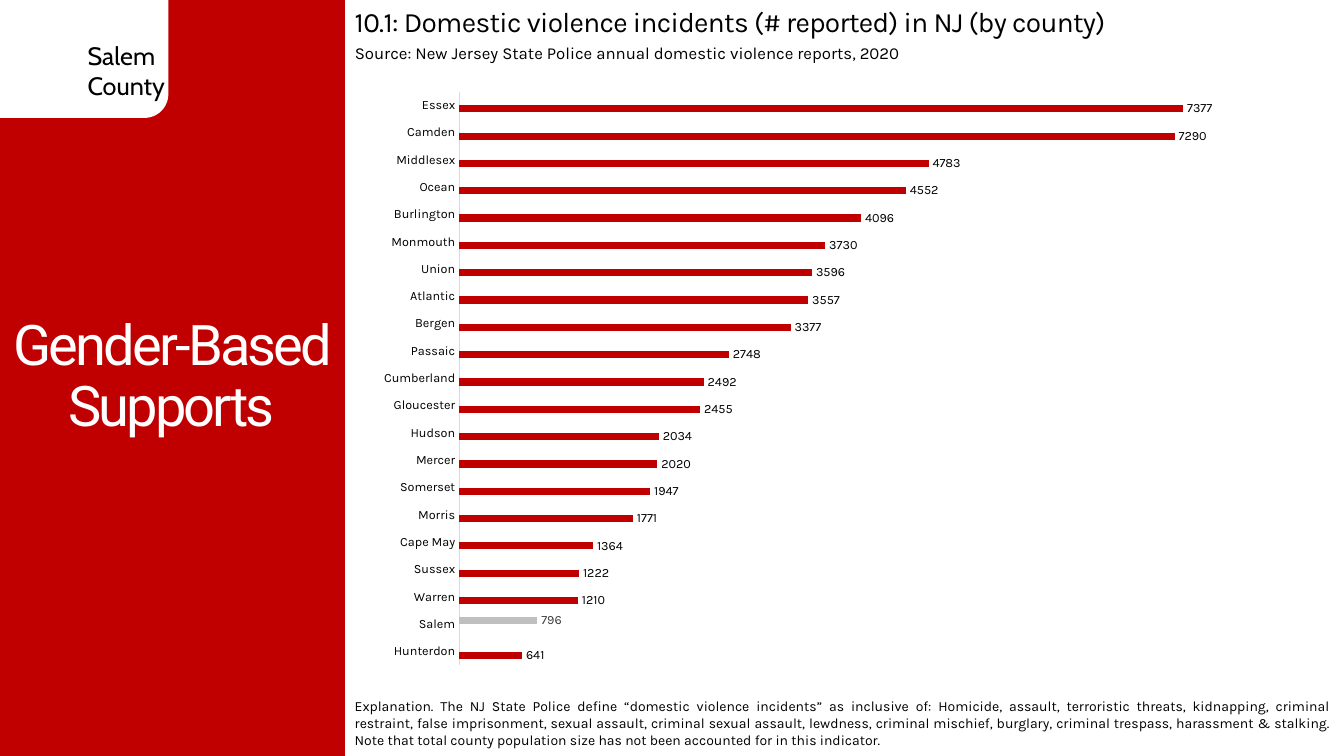
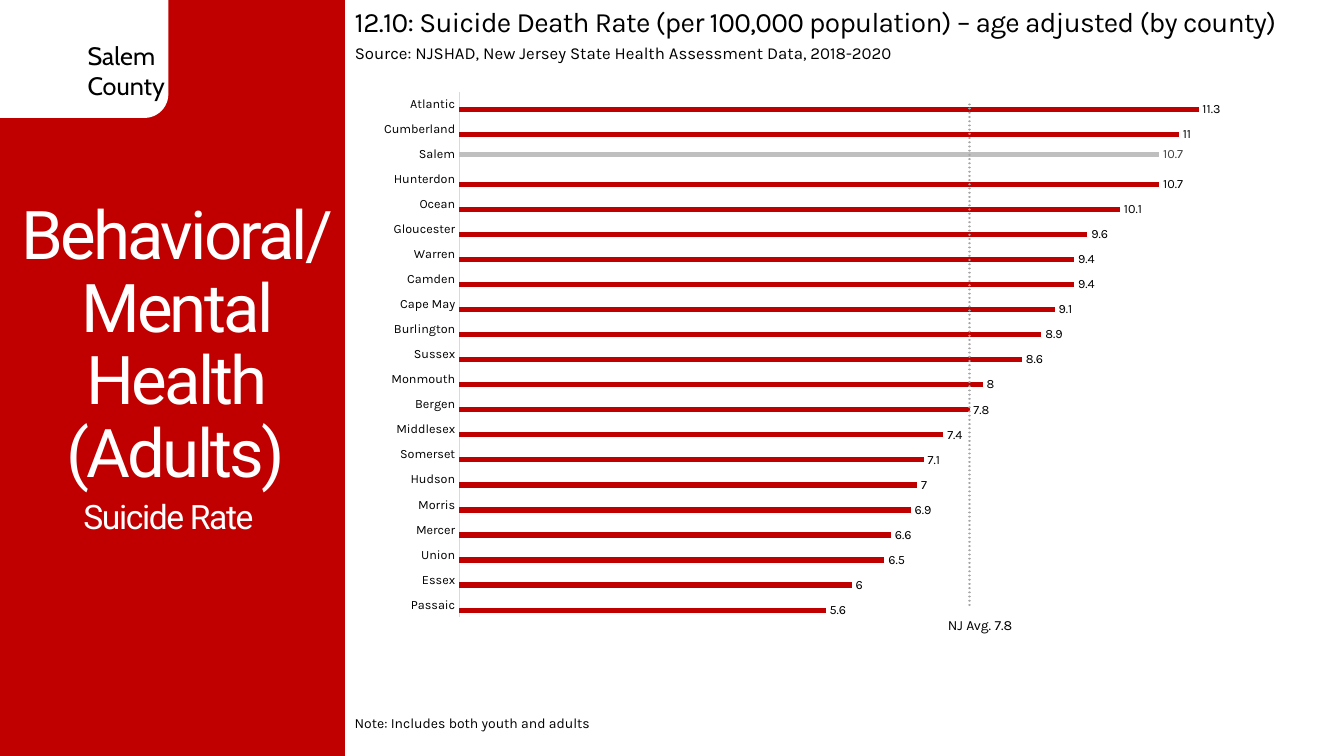
from pptx import Presentation
from pptx.chart.data import CategoryChartData
from pptx.dml.color import RGBColor
from pptx.enum.chart import XL_CHART_TYPE, XL_LABEL_POSITION, XL_TICK_MARK
from pptx.enum.shapes import MSO_SHAPE
from pptx.enum.text import MSO_ANCHOR, PP_ALIGN
from pptx.oxml import parse_xml
from pptx.oxml.ns import nsdecls, qn
from pptx.util import Inches, Pt

BAR = XL_CHART_TYPE.BAR_CLUSTERED
OUTSIDE_END = XL_LABEL_POSITION.OUTSIDE_END
NO_TICK = XL_TICK_MARK.NONE
RECTANGLE, ROUNDED = MSO_SHAPE.RECTANGLE, MSO_SHAPE.ROUNDED_RECTANGLE
TOP, MIDDLE = MSO_ANCHOR.TOP, MSO_ANCHOR.MIDDLE
LEFT, CENTER, JUSTIFY = PP_ALIGN.LEFT, PP_ALIGN.CENTER, PP_ALIGN.JUSTIFY

COLORS = {"red": "C00000", "white": "FFFFFF", "black": "000000", "highlight": "BFBFBF",
          "label": "404040", "axis": "D9D9D9", "average": "A6A6A6"}

# Text styles: font, paragraph and frame values, colour and letter spacing in points
BODY = {"font": {"name": "Karla", "size": Pt(12)}, "para": {"alignment": LEFT},
        "frame": {"vertical_anchor": TOP}, "color": "black", "spacing": 0}
HEADING = BODY | {"font": {"name": "Karla", "size": Pt(20)}, "spacing": -0.5}
NOTE = BODY | {"font": {"name": "Karla", "size": Pt(10)}, "para": {"alignment": JUSTIFY},
               "frame": {"vertical_anchor": MIDDLE}}
AVERAGE = NOTE | {"para": {"alignment": CENTER}}
COUNTY = BODY | {"font": {"name": "Cabin", "size": Pt(18)}}
TOPIC = {"font": {"name": "Roboto", "size": Pt(40)},
         "para": {"alignment": CENTER, "line_spacing": 0.9},
         "frame": {"vertical_anchor": MIDDLE}, "color": "white", "spacing": -2}
LARGE_TOPIC = TOPIC | {"font": {"name": "Roboto", "size": Pt(48)}}
SUBTOPIC = TOPIC | {"font": {"name": "Roboto", "size": Pt(24)},
                    "frame": {"vertical_anchor": TOP}, "spacing": -1}

HIGHLIGHT = "Salem"
SLIDES = [
    {
        "heading": "10.1: Domestic violence incidents (# reported) in NJ (by county)",
        "source": "Source: New Jersey State Police annual domestic violence reports, 2020",
        "note": "Explanation. The NJ State Police define “domestic violence incidents” as "
                "inclusive of: Homicide, assault, terroristic threats, kidnapping, criminal "
                "restraint, false imprisonment, sexual assault, criminal sexual assault, "
                "lewdness, criminal mischief, burglary, criminal trespass, harassment & "
                "stalking. Note that total county population size has not been accounted "
                "for in this indicator.",
        "captions": [((-0.26, 0.75, 3.92, 6), "Gender-Based Supports", TOPIC)],
        "maximum": 8000, "plot_height": 0.96, "format": "#,##0", "average": None,
        "values": {
            "Essex": 7377, "Camden": 7290, "Middlesex": 4783, "Ocean": 4552,
            "Burlington": 4096, "Monmouth": 3730, "Union": 3596, "Atlantic": 3557,
            "Bergen": 3377, "Passaic": 2748, "Cumberland": 2492, "Gloucester": 2455,
            "Hudson": 2034, "Mercer": 2020, "Somerset": 1947, "Morris": 1771,
            "Cape May": 1364, "Sussex": 1222, "Warren": 1210, "Salem": 796,
            "Hunterdon": 641},
    },
    {
        "heading": "12.10: Suicide Death Rate (per 100,000 population) – age adjusted (by county)",
        "source": "Source: NJSHAD, New Jersey State Health Assessment Data, 2018-2020",
        "note": "Note: Includes both youth and adults",
        "captions": [((-0.03, 0.44, 3.55, 6), "Behavioral/ Mental Health (Adults)", LARGE_TOPIC),
                     ((-0.04, 4.92, 3.42, 0.46), "Suicide Rate", SUBTOPIC),
                     ((9.12, 6.05, 1.2, 0.3), "NJ Avg. 7.8", AVERAGE)],
        "maximum": 12, "plot_height": 0.88, "format": "#,##0.0", "average": 7.8,
        "values": {
            "Atlantic": 11.3, "Cumberland": 11, "Salem": 10.7, "Hunterdon": 10.7,
            "Ocean": 10.1, "Gloucester": 9.6, "Warren": 9.4, "Camden": 9.4,
            "Cape May": 9.1, "Burlington": 8.9, "Sussex": 8.6, "Monmouth": 8,
            "Bergen": 7.8, "Middlesex": 7.4, "Somerset": 7.1, "Hudson": 7,
            "Morris": 6.9, "Mercer": 6.6, "Union": 6.5, "Essex": 6, "Passaic": 5.6},
    },
]


def add_text(page, place, text, style):
    """Add a text box with one paragraph for each line of text."""
    frame = page.shapes.add_textbox(*map(Inches, place)).text_frame
    frame.word_wrap = True
    for name, value in style["frame"].items():
        setattr(frame, name, value)
    for index, line in enumerate(text.split("\n")):
        para = frame.add_paragraph() if index else frame.paragraphs[0]
        span = para.add_run()
        span.text = line
        for target, values in ((para, style["para"]), (span.font, style["font"])):
            for name, value in values.items():
                setattr(target, name, value)
        span.font.color.rgb = RGBColor.from_string(COLORS[style["color"]])
        if style["spacing"]:
            span.font._element.set("spc", str(round(style["spacing"] * 100)))


def style_font(font, name, size, color):
    """Set the typeface, size and colour of chart text."""
    font.name, font.size = name, Pt(size)
    font.color.rgb = RGBColor.from_string(COLORS[color])


deck = Presentation()
deck.slide_width, deck.slide_height = Inches(13.33), Inches(7.5)

for content in SLIDES:
    page = deck.slides.add_slide(deck.slide_layouts[6])

    # Side band and county tab
    for preset, place, color in ((RECTANGLE, (0, 0, 3.42, 7.5), "red"),
                                 (ROUNDED, (-0.33, -0.25, 2, 1.42), "white")):
        panel = page.shapes.add_shape(preset, *map(Inches, place))
        panel.shadow.inherit = False
        panel.fill.solid()
        panel.fill.fore_color.rgb = RGBColor.from_string(COLORS[color])
        panel.line.fill.background()
    add_text(page, (0.77, 0.35, 1, 0.71), "Salem\nCounty", COUNTY)

    # Heading, source and note
    add_text(page, (3.42, 0, 9.86, 0.44), content["heading"], HEADING)
    add_text(page, (3.42, 0.37, 9.19, 0.3), content["source"], BODY)
    add_text(page, (3.42, 6.92, 9.86, 0.5), content["note"], NOTE)

    # Chart data, lowest bar first
    rows = list(reversed(content["values"].items()))
    columns = [[None if county == HIGHLIGHT else value for county, value in rows],
               [value if county == HIGHLIGHT else None for county, value in rows]]
    if content["average"]:
        columns.append([content["average"]] * len(rows))
    data = CategoryChartData()
    data.categories = [county for county, value in rows]
    for number, column in enumerate(columns, 1):
        data.add_series(f"Series {number}", column)

    # Chart and axes
    place = map(Inches, (3.63, 0.79, 8.89, 5.93))
    chart = page.shapes.add_chart(BAR, *place, data).chart
    chart.has_title = chart.has_legend = False
    style_font(chart.font, "Calibri", 10, "black")
    counties, scale = chart.category_axis, chart.value_axis
    counties.major_tick_mark = counties.minor_tick_mark = NO_TICK
    style_font(counties.tick_labels.font, "Karla", 9, "black")
    counties.format.line.width = Pt(0.75)
    counties.format.line.color.rgb = RGBColor.from_string(COLORS["axis"])
    scale.minimum_scale, scale.maximum_scale = 0, content["maximum"]
    scale.has_major_gridlines = scale.visible = False

    # Fixed plot area inside the chart frame
    plot_area = chart._chartSpace.chart.plotArea
    for layout in plot_area.findall(qn("c:layout")):
        plot_area.remove(layout)
    plot_area.insert(0, parse_xml(
        f'<c:layout {nsdecls("c")}><c:manualLayout><c:layoutTarget val="inner"/>'
        '<c:xMode val="edge"/><c:yMode val="edge"/><c:x val="0.104"/><c:y val="0.02"/>'
        f'<c:w val="0.876"/><c:h val="{content["plot_height"]}"/>'
        '</c:manualLayout></c:layout>'))

    # Bars and their labels
    plot = chart.plots[0]
    plot.gap_width, plot.overlap, plot.vary_by_categories = 182, 0, False
    bar_styles = (("red", "black", "General"), ("highlight", "label", content["format"]))
    for series, (fill, label_color, number_format) in zip(plot.series, bar_styles):
        series.invert_if_negative = False
        series.format.fill.solid()
        series.format.fill.fore_color.rgb = RGBColor.from_string(COLORS[fill])
        labels = series.data_labels
        labels.show_value, labels.position = True, OUTSIDE_END
        labels.number_format, labels.number_format_is_linked = number_format, False
        style_font(labels.font, "Karla", 9, label_color)

    # State average: unfilled bars carrying a dotted trend line
    if content["average"]:
        series = plot.series[2]
        series.format.fill.background()
        series._element.find(qn("c:cat")).addprevious(parse_xml(
            f'<c:trendline {nsdecls("c", "a")}><c:spPr><a:ln w="{Pt(1.5)}" cap="rnd">'
            f'<a:solidFill><a:srgbClr val="{COLORS["average"]}"/></a:solidFill>'
            '<a:prstDash val="sysDot"/></a:ln></c:spPr><c:trendlineType val="linear"/>'
            '<c:dispRSqr val="0"/><c:dispEq val="0"/></c:trendline>'))

    # Topic on the band and any caption on the chart
    for place, text, style in content["captions"]:
        add_text(page, place, text, style)

deck.save("out.pptx")
